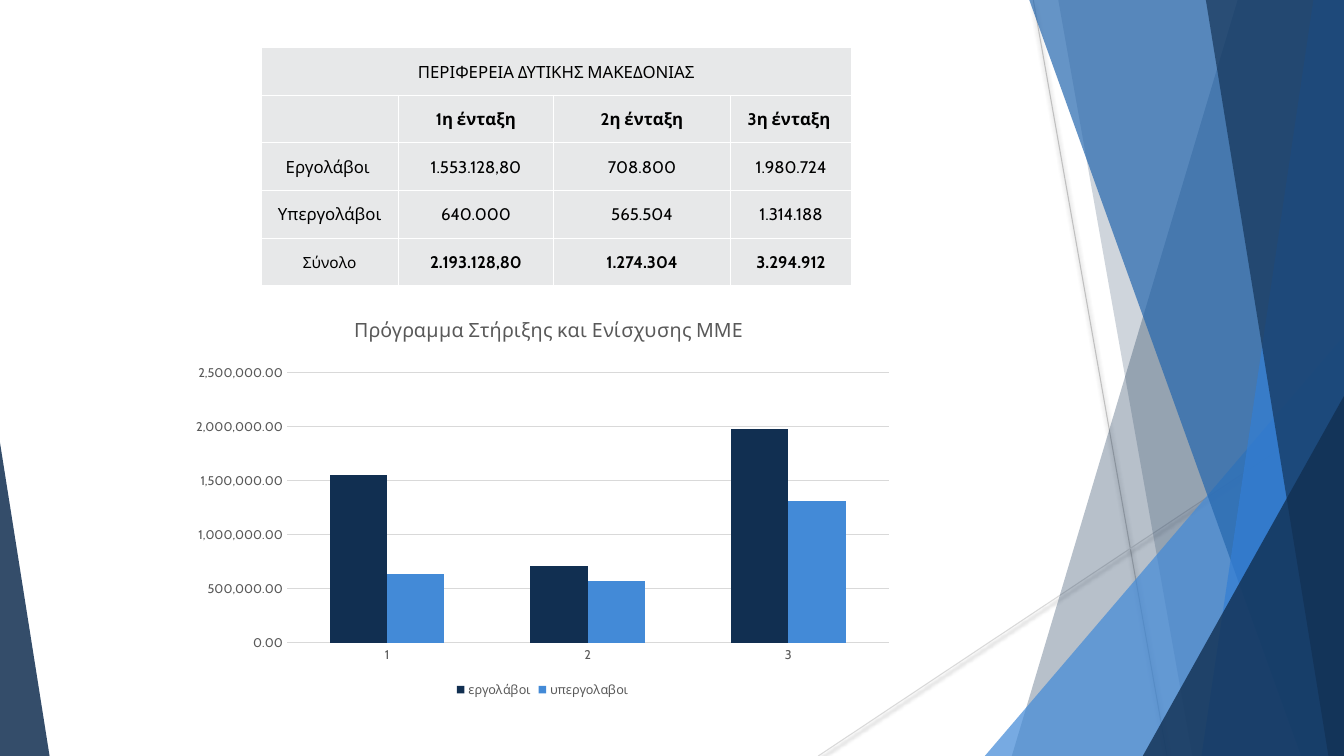
from lxml import etree
from pptx import Presentation
from pptx.chart.data import CategoryChartData
from pptx.dml.color import RGBColor
from pptx.enum.chart import XL_CHART_TYPE, XL_LEGEND_POSITION, XL_TICK_MARK
from pptx.enum.shapes import MSO_CONNECTOR, MSO_SHAPE
from pptx.enum.text import MSO_ANCHOR, PP_ALIGN
from pptx.oxml import parse_xml
from pptx.oxml.ns import qn
from pptx.util import Cm, Pt

STRAIGHT = MSO_CONNECTOR.STRAIGHT
TRIANGLE = MSO_SHAPE.ISOSCELES_TRIANGLE
CENTER = PP_ALIGN.CENTER
MIDDLE = MSO_ANCHOR.MIDDLE
CLUSTERED = XL_CHART_TYPE.COLUMN_CLUSTERED
BOTTOM = XL_LEGEND_POSITION.BOTTOM
NO_TICK = XL_TICK_MARK.NONE
NAMESPACE = "http://schemas.openxmlformats.org/drawingml/2006/main"
CHART_NAMESPACE = "http://schemas.openxmlformats.org/drawingml/2006/chart"
FONT = "Cabin"
NAVY, BLUE, GRAY, GRID = "112F51", "438AD7", "595959", "D9D9D9"
WIDTH, HEIGHT = 33.87, 19.05


def color(value):
    return RGBColor.from_string(value)


def style_font(font, size, value, bold=False):
    font.name = FONT
    font.size = Pt(size)
    font.bold = bold
    font.color.rgb = color(value)


presentation = Presentation()
presentation.slide_width = Cm(WIDTH)
presentation.slide_height = Cm(HEIGHT)
slide = presentation.slides.add_slide(presentation.slide_layouts[6])
shapes = slide.shapes

for start_x, start_y, end_x, end_y, line_color in [
    (26.04, 0, 29.41, HEIGHT, "BFBFBF"),
    (WIDTH, 10.24, 20.62, HEIGHT, GRID),
]:
    line = shapes.add_connector(STRAIGHT, Cm(start_x), Cm(start_y), Cm(end_x), Cm(end_y))
    line.line.color.rgb = color(line_color)
    line.line.width = Pt(0.75)
    line._element.spPr.append(parse_xml(
        f'<a:effectLst xmlns:a="{NAMESPACE}">'
        '<a:outerShdw blurRad="38100" dist="25400" dir="5400000">'
        '<a:srgbClr val="000000"><a:alpha val="40000"/></a:srgbClr>'
        '</a:outerShdw></a:effectLst>'))

bands = [
    ("panel", (31.19, 25.5), NAVY, 30),
    ("panel", (26.67, 30.05), NAVY, 20),
    ("triangle", (24.82, 8.46, 9.05, 1), BLUE, 72),
    ("panel", (25.94, 32.79), "2567AE", 70),
    ("panel", (33.1, 30.28), "337ED4", 70),
    ("panel", (30.39, 33.48), NAVY, 65),
    ("triangle", (28.8, 9.98, 5.07, 1), NAVY, 80),
    ("triangle", (0, 11.15, 1.25, 0), NAVY, 85),
]
for kind, geometry, fill_color, opacity in bands:
    if kind == "panel":
        top_x, bottom_x = geometry
        builder = shapes.build_freeform(Cm(top_x), 0)
        corners = [(WIDTH, 0), (WIDTH, HEIGHT), (bottom_x, HEIGHT)]
        builder.add_line_segments([(Cm(x), Cm(y)) for x, y in corners])
        shape = builder.convert_to_shape()
    else:
        left, top, width, apex = geometry
        shape = shapes.add_shape(TRIANGLE, Cm(left), Cm(top), Cm(width), Cm(HEIGHT - top))
        shape.adjustments[0] = apex
    shape.shadow.inherit = False
    shape.line.fill.background()
    shape.fill.solid()
    shape.fill.fore_color.rgb = color(fill_color)
    fill_element = shape._element.spPr.find(qn("a:solidFill"))[0]
    etree.SubElement(fill_element, qn("a:alpha")).set("val", str(opacity * 1000))

rows = [
    ["ΠΕΡΙΦΕΡΕΙΑ ΔΥΤΙΚΗΣ ΜΑΚΕΔΟΝΙΑΣ", "", "", ""],
    ["", "1η ένταξη", "2η ένταξη", "3η ένταξη "],
    ["Εργολάβοι ", "1.553.128,80", "708.800", "1.980.724"],
    ["Υπεργολάβοι", "640.000", "565.504", "1.314.188"],
    ["Σύνολο", "2.193.128,80", "1.274.304", "3.294.912"],
]
column_widths = [3.46, 3.91, 4.46, 3.05]
row_height = 1.2
table = shapes.add_table(len(rows), len(column_widths), Cm(6.58), Cm(1.2),
                         Cm(sum(column_widths)), Cm(row_height * len(rows))).table
for column, width in zip(table.columns, column_widths):
    column.width = Cm(width)
for row_index, values in enumerate(rows):
    table.rows[row_index].height = Cm(row_height)
    for column_index, value in enumerate(values):
        cell = table.cell(row_index, column_index)
        properties = cell._tc.get_or_add_tcPr()
        for side in ("lnL", "lnR", "lnT", "lnB"):
            properties.append(parse_xml(
                f'<a:{side} xmlns:a="{NAMESPACE}" w="12700"><a:solidFill>'
                f'<a:srgbClr val="FFFFFF"/></a:solidFill></a:{side}>'))
        cell.fill.solid()
        cell.fill.fore_color.rgb = color("E7E8E9")
        cell.vertical_anchor = MIDDLE
        cell.margin_left = cell.margin_right = cell.margin_top = Cm(0.03)
        cell.margin_bottom = 0
        paragraph = cell.text_frame.paragraphs[0]
        paragraph.text = value
        paragraph.alignment = CENTER
        size = 11 if value == "Σύνολο" else 12
        bold = row_index in (1, 4) and column_index > 0
        style_font(paragraph.font, size, "000000", bold)
        for run in paragraph.runs:
            style_font(run.font, size, "000000", bold)
table.cell(0, 0).merge(table.cell(0, 3))

chart_data = CategoryChartData()
chart_data.categories = ["1", "2", "3"]
chart_data.add_series("εργολάβοι", [1550000, 710000, 1980000])
chart_data.add_series("υπεργολαβοι", [640000, 570000, 1310000])
chart = shapes.add_chart(CLUSTERED, Cm(4.58), Cm(7.75), Cm(18.18), Cm(9.93), chart_data).chart
style_font(chart.font, 10, "000000")

chart.has_title = True
title = chart.chart_title.text_frame
title.text = "Πρόγραμμα Στήριξης και Ενίσχυσης ΜΜΕ"
style_font(title.paragraphs[0].runs[0].font, 14, GRAY)
chart.chart_title.include_in_layout = False
title_element = chart.chart_title._element
for layout in title_element.findall(qn("c:layout")):
    title_element.remove(layout)
title_element.find(qn("c:tx")).addnext(parse_xml(
    f'<c:layout xmlns:c="{CHART_NAMESPACE}"><c:manualLayout>'
    '<c:xMode val="edge"/><c:yMode val="edge"/>'
    '<c:x val="0.234"/><c:y val="0.0125"/></c:manualLayout></c:layout>'))

chart.has_legend = True
chart.legend.position = BOTTOM
chart.legend.include_in_layout = False
style_font(chart.legend.font, 9, GRAY)

for axis in (chart.category_axis, chart.value_axis):
    axis.major_tick_mark = NO_TICK
    axis.minor_tick_mark = NO_TICK
    axis.format.line.fill.background()
    style_font(axis.tick_labels.font, 9, GRAY)

value_axis = chart.value_axis
value_axis.minimum_scale = 0
value_axis.maximum_scale = 2500000
value_axis.major_unit = 500000
value_axis.tick_labels.number_format = "#,##0.00"
value_axis.tick_labels.number_format_is_linked = False
value_axis.major_gridlines.format.line.color.rgb = color(GRID)
value_axis.major_gridlines.format.line.width = Pt(0.75)

plot = chart.plots[0]
plot.gap_width = 150
plot.overlap = 0
plot.vary_by_categories = False
for series, series_color in zip(plot.series, (NAVY, BLUE)):
    series.format.fill.solid()
    series.format.fill.fore_color.rgb = color(series_color)

presentation.save("out.pptx")
